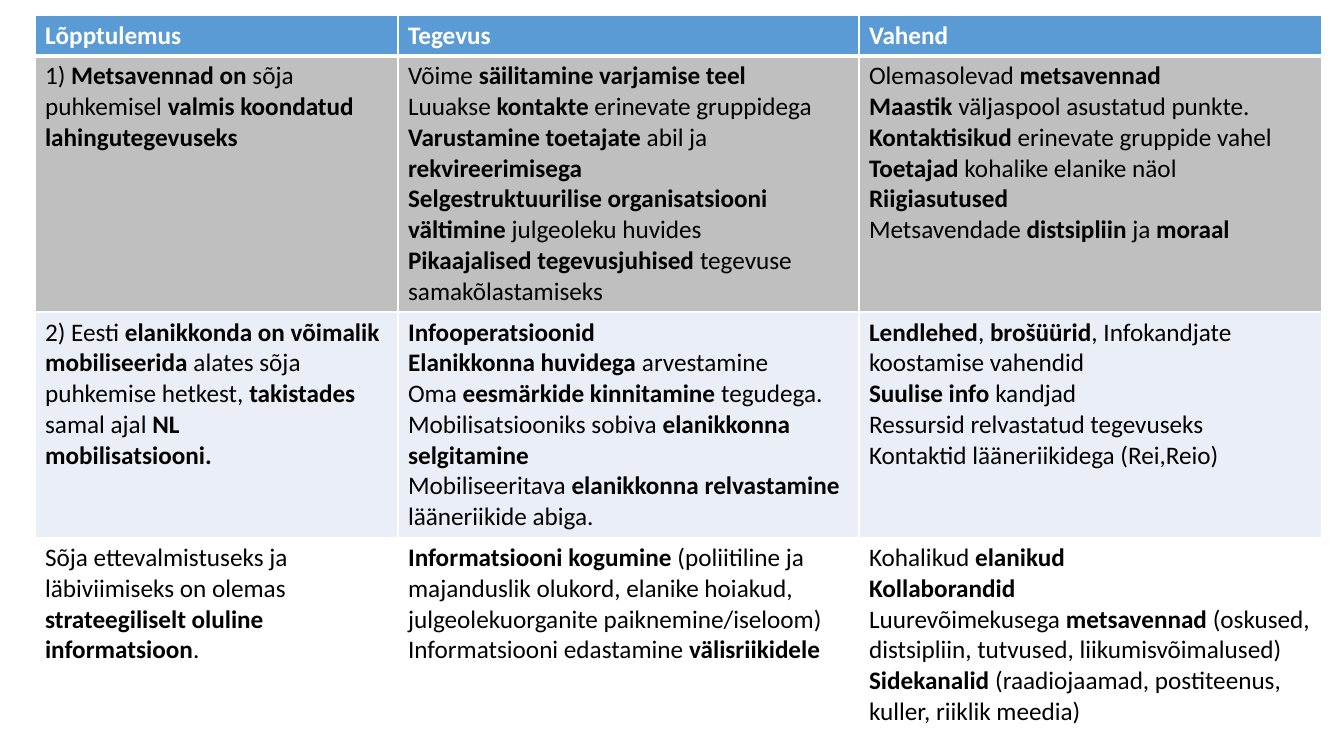
import pptx
import pptx.util
import pptx.dml.color
from lxml import etree

PX = 12192000 / 1344
NS = "http://schemas.openxmlformats.org/drawingml/2006/main"
HUES = {"blue": "5B9BD5", "grey": "BFBFBF", "pale": "EAEFF7",
        "white": "FFFFFF", "black": "000000"}

COLS = [363, 461, 463]
HIGHS = [40, 248, 187, 188]
FILLS = ["blue", "grey", "pale", "white"]

# Each cell is a list of paragraphs; asterisks enclose bold text.
ROWS = [
    [["*Lõpptulemus*"], ["*Tegevus*"], ["*Vahend*"]],
    [
        ["1) *Metsavennad on *sõja puhkemisel *valmis koondatud lahingutegevuseks*"],
        ["Võime *säilitamine varjamise teel*",
         "Luuakse *kontakte *erinevate gruppidega",
         "*Varustamine toetajate *abil ja *rekvireerimisega*",
         "*Selgestruktuurilise organisatsiooni vältimine* julgeoleku huvides",
         "*Pikaajalised tegevusjuhised *tegevuse samakõlastamiseks"],
        ["Olemasolevad *metsavennad*",
         "*Maastik* väljaspool asustatud punkte.",
         "*Kontaktisikud* erinevate gruppide vahel",
         "*Toetajad* kohalike elanike näol",
         "*Riigiasutused*",
         "Metsavendade *distsipliin* ja *moraal*"],
    ],
    [
        ["2) Eesti *elanikkonda on võimalik*",
         "*mobiliseerida *alates sõja puhkemise hetkest, *takistades* samal ajal *NL*",
         "*mobilisatsiooni.*"],
        ["*Infooperatsioonid*",
         "*Elanikkonna huvidega *arvestamine",
         "Oma *eesmärkide kinnitamine *tegudega.",
         "Mobilisatsiooniks sobiva *elanikkonna selgitamine*",
         "Mobiliseeritava *elanikkonna relvastamine *lääneriikide abiga."],
        ["*Lendlehed*, *brošüürid*, Infokandjate koostamise vahendid",
         "*Suulise info *kandjad",
         "Ressursid relvastatud tegevuseks",
         "Kontaktid lääneriikidega (Rei,Reio)"],
    ],
    [
        ["Sõja ettevalmistuseks ja läbiviimiseks on olemas",
         "*strateegiliselt oluline informatsioon*."],
        ["*Informatsiooni kogumine *(poliitiline ja majanduslik olukord, "
         "elanike hoiakud, julgeolekuorganite paiknemine/iseloom)",
         "Informatsiooni edastamine *välisriikidele*"],
        ["Kohalikud *elanikud*",
         "*Kollaborandid*",
         "Luurevõimekusega *metsavennad* (oskused,",
         "distsipliin, tutvused, liikumisvõimalused)",
         "*Sidekanalid* (raadiojaamad, postiteenus,",
         "kuller, riiklik meedia)"],
    ],
]


def emu(px):
    return pptx.util.Emu(round(px * PX))


def hue(name):
    return pptx.dml.color.RGBColor.from_string(HUES[name])


class Deck:
    font = "Calibri"
    size = 18

    def __init__(self, wide, high):
        self.file = pptx.Presentation()
        self.file.slide_width = emu(wide)
        self.file.slide_height = emu(high)
        self.slide = self.file.slides.add_slide(self.file.slide_layouts[6])

    def table(self, left, top, cols, highs, rows, fills):
        grid = self.slide.shapes.add_table(
            len(rows), len(cols), emu(left), emu(top),
            emu(sum(cols)), emu(sum(highs))).table
        for col, wide in zip(grid.columns, cols):
            col.width = emu(wide)
        for r, (row, high, fill) in enumerate(zip(rows, highs, fills)):
            grid.rows[r].height = emu(high)
            for c, lines in enumerate(row):
                cell = grid.cell(r, c)
                self.edge(cell, top=3 if r == 1 else 1, base=3 if r == 0 else 1)
                cell.fill.solid()
                cell.fill.fore_color.rgb = hue(fill)
                self.text(cell.text_frame, lines, "black" if r else "white")

    def edge(self, cell, top, base):
        """Draw white borders, with top and base widths in points."""
        props = cell._tc.get_or_add_tcPr()
        for side, wide in (("L", 1), ("R", 1), ("T", top), ("B", base)):
            line = etree.SubElement(props, f"{{{NS}}}ln{side}",
                                    w=str(pptx.util.Pt(wide)))
            fill = etree.SubElement(line, f"{{{NS}}}solidFill")
            etree.SubElement(fill, f"{{{NS}}}srgbClr", val=HUES["white"])

    def text(self, frame, lines, color):
        for i, line in enumerate(lines):
            para = frame.add_paragraph() if i else frame.paragraphs[0]
            para.font.name = self.font
            para.font.size = pptx.util.Pt(self.size)
            para.font.color.rgb = hue(color)
            for n, part in enumerate(line.split("*")):
                if part:
                    run = para.add_run()
                    run.text = part
                    run.font.bold = n % 2 == 1


def main():
    deck = Deck(1344, 756)
    deck.table(35, 15, COLS, HIGHS, ROWS, FILLS)
    deck.file.save("out.pptx")


if __name__ == "__main__":
    main()
